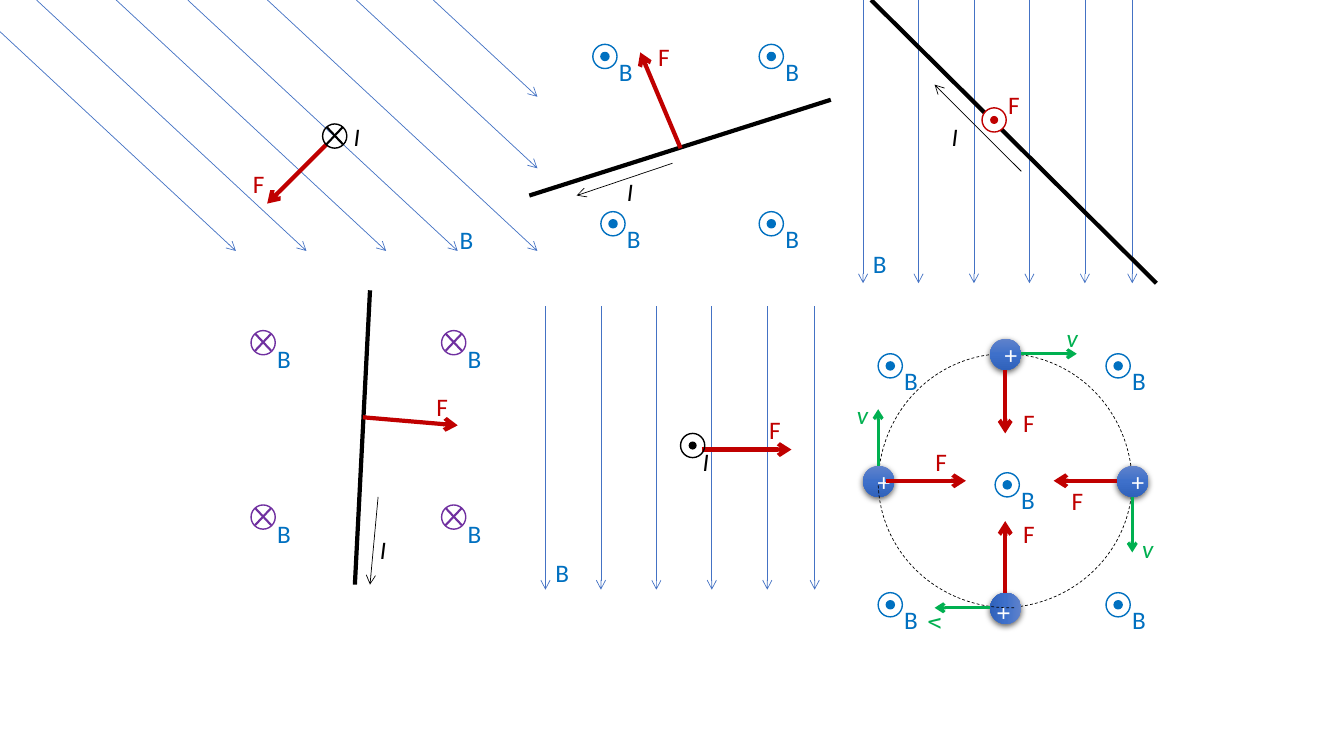
from copy import deepcopy
from lxml.etree import SubElement
from pptx import Presentation
from pptx.dml.color import RGBColor
from pptx.enum.dml import MSO_LINE
from pptx.enum.shapes import MSO_CONNECTOR as Connector, MSO_SHAPE as Preset
from pptx.enum.text import MSO_ANCHOR, MSO_AUTO_SIZE, PP_ALIGN
from pptx.oxml.ns import qn
from pptx.util import Inches, Pt

BLACK, WHITE, RED, BLUE = "000000", "FFFFFF", "C00000", "0070C0"
GREEN, PURPLE, FIELD_BLUE = "00B050", "7030A0", "4472C4"
FONT = {"name": "Calibri", "size": Pt(18)}
LABEL_FRAME = {"word_wrap": False, "auto_size": MSO_AUTO_SIZE.SHAPE_TO_FIT_TEXT}
CHARGE_FRAME = {"word_wrap": True, "vertical_anchor": MSO_ANCHOR.MIDDLE}
CHARGE_STOPS = [(0, "6183CB"), (0.5, "3E70CA"), (1, "3062BB")]
LABEL_HEIGHT, RING, DOT, CHARGE = 0.4, 0.24, 0.08, 0.31

LINE_STYLES = {
    "field": (FIELD_BLUE, 0.5, True),
    "wire": (BLACK, 3, False),
    "current": (BLACK, 0.5, True),
    "force": (RED, 3, True),
    "velocity": (GREEN, 2.25, True),
}
LABEL_STYLES = {
    "B": (0.34, BLUE, False),
    "F": (0.32, RED, False),
    "I": (0.27, BLACK, True),
    "v": (0.32, GREEN, True),
}

DIAGONAL_SLOPE = 0.93
DIAGONAL_ENDS = [(2.34, 2.49), (3.04, 2.49), (3.83, 2.49), (4.54, 2.49),
                 (5.33, 2.49), (5.33, 1.67), (5.33, 0.96)]
VERTICAL_OFFSETS = [0, 0.55, 1.1, 1.65, 2.2, 2.67]
VERTICAL_FIELDS = [(8.56, 0, 2.81), (5.41, 3.04, 5.85)]

WIRES = [((5.25, 1.94), (8.24, 0.99)), ((8.64, 0), (11.47, 2.81)),
         ((3.67, 2.88), (3.52, 5.8))]
CURRENTS = [((6.67, 1.62), (5.72, 1.94)), ((10.13, 1.7), (9.27, 0.84)),
            ((3.75, 4.93), (3.67, 5.8))]
FORCES = [((3.24, 1.43), (2.65, 2.02)), ((6.75, 1.47), (6.35, 0.52)),
          ((3.6, 4.14), (4.54, 4.22)), ((6.96, 4.46), (7.85, 4.46)),
          ((11.08, 4.77), (10.45, 4.77)), ((8.79, 4.77), (9.58, 4.77)),
          ((9.97, 3.67), (9.97, 4.3)), ((9.97, 5.88), (9.97, 5.17))]
VELOCITIES = [((9.82, 6.03), (9.27, 6.03)), ((11.23, 4.93), (11.23, 5.48)),
              ((8.71, 4.62), (8.71, 4.06)), ((10.13, 3.51), (10.68, 3.51))]

FIELDS_OUT = [(5.88, 0.44), (7.53, 2.1), (7.53, 0.44), (5.96, 2.1), (8.71, 3.51),
              (10.97, 5.88), (10.97, 3.51), (8.71, 5.88), (9.87, 4.69)]
FIELDS_IN = [(x, y) for y in (3.28, 5.01) for x in (2.49, 4.38)]
CURRENT_IN, CURRENT_OUT, FORCE_OUT = (3.2, 1.23), (6.75, 4.3), (9.74, 1.07)

ARCS = [(8.67, 3.47, 90, 162.2, 214.49), (8.71, 3.51, 0, 162.2, 214.49),
        (8.71, 3.51, 0, 108.96, 162.18), (8.75, 3.47, 90, 214.68, 52.8)]
CHARGES = [(9.82, 5.88, 90), (11.08, 4.62, 0), (8.56, 4.62, 0), (9.82, 3.36, 0)]
LABELS = {
    "B": [(4.46, 2.18), (8.56, 2.41), (5.41, 5.48)],
    "I": [(3.41, 1.15), (6.12, 1.7), (9.34, 1.15), (3.67, 5.25), (6.87, 4.38)],
    "F": [(2.41, 1.62), (6.43, 0.36), (9.9, 0.84), (4.23, 3.83), (7.53, 4.06),
          (9.18, 4.38), (10.05, 3.99), (10.53, 4.77), (10.05, 5.09)],
    "v": [(11.23, 5.24), (8.4, 3.91), (10.48, 3.15)],
}
TURNED_VELOCITY_LABEL = (9.15, 5.99)

prs = Presentation()
prs.slide_width, prs.slide_height = Inches(13.33), Inches(7.5)
shapes = prs.slides.add_slide(prs.slide_layouts[6]).shapes


def rgb(colour):
    return RGBColor.from_string(colour)


def set_all(target, values):
    for key, value in values.items():
        setattr(target, key, value)


def write(frame, text, colour, frame_format, italic=False, align=None):
    set_all(frame, frame_format)
    paragraph = frame.paragraphs[0]
    paragraph.alignment = align
    run = paragraph.add_run()
    run.text = text
    set_all(run.font, {**FONT, "italic": italic})
    run.font.color.rgb = rgb(colour)


def add_line(start, end, colour, width, arrow=False):
    line = shapes.add_connector(Connector.STRAIGHT, *map(Inches, (*start, *end)))
    line.line.color.rgb = rgb(colour)
    line.line.width = Pt(width)
    if arrow:
        SubElement(line.line._get_or_add_ln(), qn("a:tailEnd"), type="arrow")
    SubElement(line._element.spPr, qn("a:effectLst"))


def add_outline(preset, x, y, width, height, fill=None, line=None, points=1):
    shape = shapes.add_shape(preset, *map(Inches, (x, y, width, height)))
    shape.shadow.inherit = False
    for part, colour in ((shape.fill, fill), (shape.line.fill, line)):
        if colour:
            part.solid()
            part.fore_color.rgb = rgb(colour)
        else:
            part.background()
    if line:
        shape.line.width = Pt(points)
    return shape


def add_label(text, x, y, rotation=0):
    width, colour, italic = LABEL_STYLES[text]
    box = shapes.add_textbox(*map(Inches, (x, y, width, LABEL_HEIGHT)))
    box.rotation = rotation
    write(box.text_frame, text, colour, LABEL_FRAME, italic)


def add_out_symbol(x, y, colour, fill=None, dot_line=None):
    inset = (RING - DOT) / 2
    add_outline(Preset.OVAL, x, y, RING, RING, fill, colour)
    add_outline(Preset.OVAL, x + inset, y + inset, DOT, DOT, colour, dot_line)


def add_in_symbol(x, y, colour):
    left, right, top, bottom = x + 0.04, x + 0.2, y + 0.03, y + 0.2
    add_outline(Preset.OVAL, x, y, RING, RING, line=colour)
    add_line((left, top), (right, bottom), colour, 1.5)
    add_line((left, bottom), (right, top), colour, 1.5)


def add_arc(x, y, rotation, *angles):
    arc = add_outline(Preset.ARC, x, y, 2.52, 2.6, line=BLACK, points=0.5)
    arc.rotation = rotation
    arc.line.dash_style = MSO_LINE.DASH
    for i, angle in enumerate(angles):
        arc.adjustments[i] = angle


def add_charge(x, y, rotation):
    charge = add_outline(Preset.OVAL, x, y, CHARGE, CHARGE)
    charge.rotation = rotation
    charge.fill.gradient()
    charge.fill.gradient_angle = 270
    properties = charge._element.spPr
    stops = properties.find(qn("a:gradFill")).find(qn("a:gsLst"))
    stops.append(deepcopy(stops[0]))
    for stop, (position, colour) in zip(charge.fill.gradient_stops, CHARGE_STOPS):
        stop.position = position
        stop.color.rgb = rgb(colour)
    shadow = SubElement(properties.find(qn("a:effectLst")), qn("a:outerShdw"),
                        blurRad=str(Pt(4.5)), dist=str(Pt(1.5)),
                        dir="5400000", algn="ctr", rotWithShape="0")
    SubElement(SubElement(shadow, qn("a:srgbClr"), val=BLACK), qn("a:alpha"), val="63000")
    write(charge.text_frame, "+", WHITE, CHARGE_FRAME, align=PP_ALIGN.CENTER)


fields = []
for x, y in DIAGONAL_ENDS:
    start_x = max(0, x - y / DIAGONAL_SLOPE)
    fields.append(((start_x, y - (x - start_x) * DIAGONAL_SLOPE), (x, y)))
for left, top, bottom in VERTICAL_FIELDS:
    fields += [((left + dx, top), (left + dx, bottom)) for dx in VERTICAL_OFFSETS]

for arc in ARCS[:3]:
    add_arc(*arc)
for charge in CHARGES:
    add_charge(*charge)
add_arc(*ARCS[3])

vectors = {"field": fields, "wire": WIRES, "current": CURRENTS,
           "force": FORCES, "velocity": VELOCITIES}
for kind, ends in vectors.items():
    for start, end in ends:
        add_line(start, end, *LINE_STYLES[kind])

for x, y in FIELDS_OUT:
    add_out_symbol(x, y, BLUE, dot_line=BLUE)
    add_label("B", x + 0.16, y + 0.07)
for x, y in FIELDS_IN:
    add_in_symbol(x, y, PURPLE)
    add_label("B", x + 0.16, y + 0.08)
add_in_symbol(*CURRENT_IN, BLACK)
add_out_symbol(*CURRENT_OUT, BLACK)
add_out_symbol(*FORCE_OUT, RED, fill=WHITE)

for text, places in LABELS.items():
    for x, y in places:
        add_label(text, x, y)
add_label("v", *TURNED_VELOCITY_LABEL, rotation=90)

prs.save("out.pptx")
